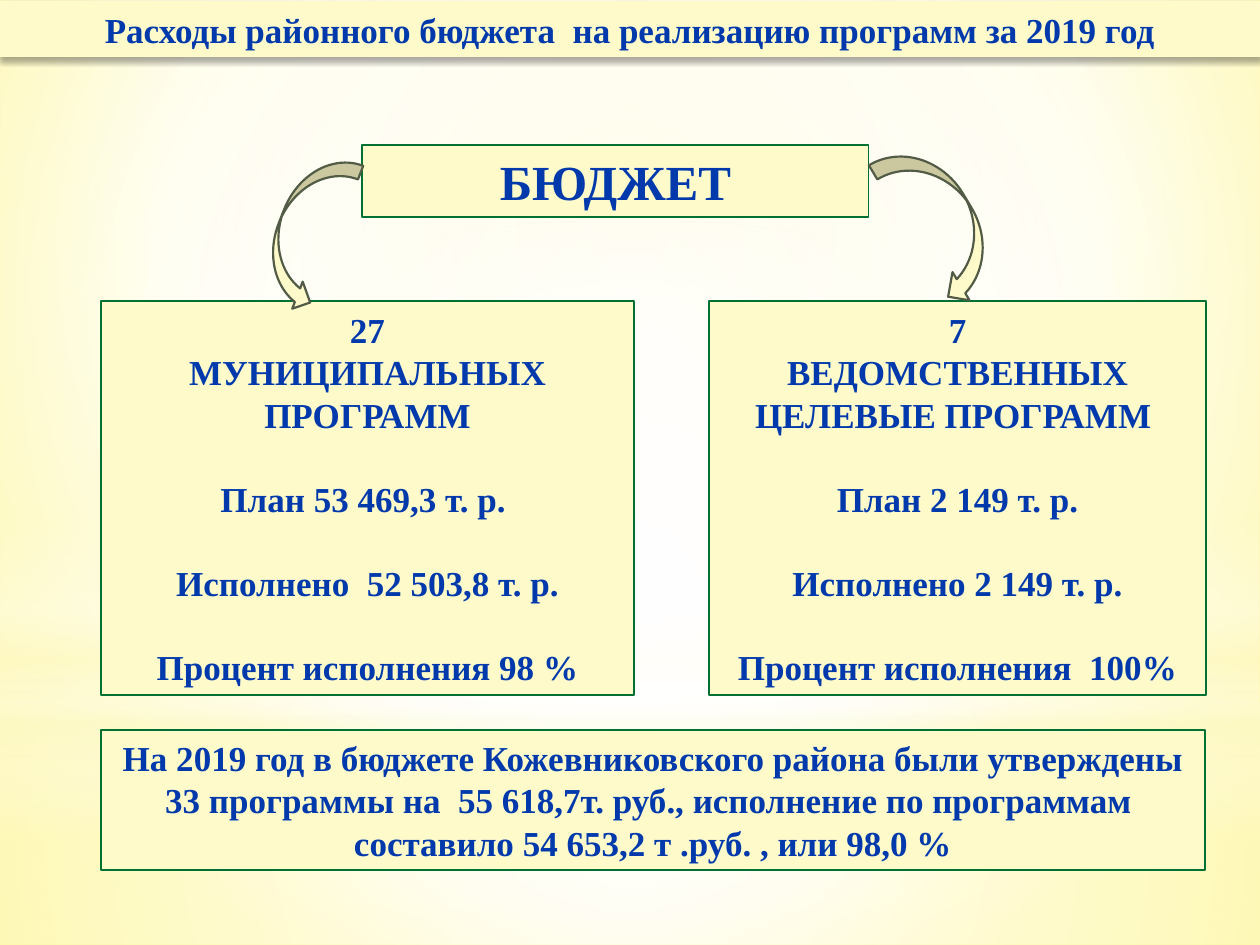
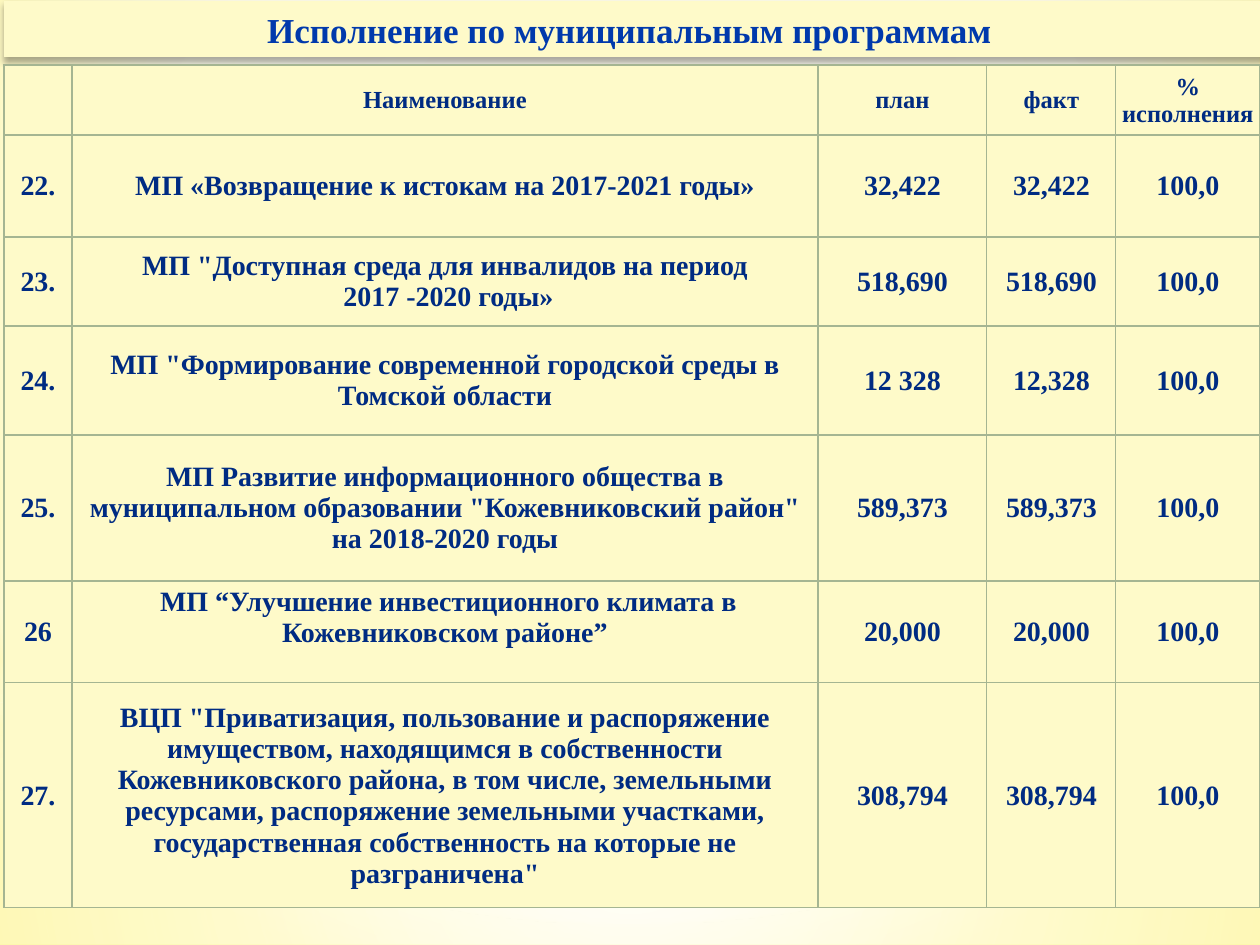
import pptx
import pptx.dml.color
import pptx.enum.shapes
import pptx.enum.text
import pptx.oxml
import pptx.util

SHAPES = pptx.enum.shapes.MSO_SHAPE
MIDDLE = pptx.enum.text.MSO_ANCHOR.MIDDLE
NAMESPACE = 'xmlns:a="http://schemas.openxmlformats.org/drawingml/2006/main"'
PX_PER_INCH = 126

CENTER = (50, 50, 50, 50)
MASTER_GRADIENTS = [
    (SHAPES.RECTANGLE, (0, 703, 1260, 242),
     [(0, "FFFFFF", 91), (37, "FFFFFF", 76), (100, "FEFAC9", 79)], CENTER),
    (SHAPES.RECTANGLE, (0, 0, 1260, 703),
     [(0, "FFFFFF", 89), (48, "FFFFFF", 62), (100, "FEFAC9", 79)], CENTER),
    (SHAPES.RECTANGLE, (0, 519, 1260, 315),
     [(0, "FFFFFF", 0), (29, "FFFFFF", 30), (45, "FEFAC9", 40),
      (55, "FFFFFF", 26), (65, "FEFAC9", 60), (100, "FFFFFF", 0)], None),
    (SHAPES.OVAL, (0, 221, 1260, 703),
     [(0, "FFFFFF", 100), (56, "FFFFFF", 0)], CENTER),
]
BACKGROUND_STOPS = [(0, "FFF9B5", 100), (60, "FFFFFF", 100), (100, "FFF46F", 100)]

MUNICIPAL_LINES = ["27", "МУНИЦИПАЛЬНЫХ ПРОГРАММ", "План 53 469,3 т. р. ",
                   "Исполнено  52 503,8 т. р.", "Процент исполнения 98 %"]
DEPARTMENT_LINES = ["7", "ВЕДОМСТВЕННЫХ ЦЕЛЕВЫЕ ПРОГРАММ ", "План 2 149 т. р.",
                    "Исполнено 2 149 т. р.", "Процент исполнения  100%"]
SUMMARY = ("На 2019 год в бюджете Кожевниковского района были утверждены 33 программы "
           "на  55 618,7т. руб., исполнение по программам  составило 54 653,2 т .руб. , "
           "или 98,0 %")

COLUMN_WIDTHS = [68, 746, 169, 129, 144]
ROW_HEIGHTS = [70, 102, 89, 109, 146, 102, 225]
PROGRAM_ROWS = [
    ["", "Наименование", "план", "факт", "% исполнения"],
    ["22.", "МП «Возвращение к истокам на 2017-2021 годы»", "32,422", "32,422", "100,0"],
    ["23.", "МП \"Доступная среда для инвалидов на период\n 2017 -2020 годы»",
     "518,690", "518,690", "100,0"],
    ["24.", "МП \"Формирование современной городской среды в Томской области",
     "12 328", "12,328", "100,0"],
    ["25.", "МП Развитие информационного общества в муниципальном образовании "
            "\"Кожевниковский район\" на 2018-2020 годы", "589,373", "589,373", "100,0"],
    ["26", " МП “Улучшение инвестиционного климата в Кожевниковском районе”",
     "20,000", "20,000", "100,0"],
    ["27.", "ВЦП \"Приватизация, пользование и распоряжение имуществом, находящимся в "
            "собственности Кожевниковского района, в том числе, земельными ресурсами, "
            "распоряжение земельными участками, государственная собственность на которые "
            "не разграничена\"", "308,794", "308,794", "100,0"],
]


def px(length):
    return pptx.util.Inches(length / PX_PER_INCH)


def color(value):
    return pptx.dml.color.RGBColor.from_string(value)


def apply_gradient(fill, element, stops, focus):
    fill.gradient()
    stop_xml = "".join(
        f'<a:gs pos="{position * 1000}"><a:srgbClr val="{value}">'
        f'<a:alpha val="{opacity * 1000}"/></a:srgbClr></a:gs>'
        for position, value, opacity in stops)
    if focus:
        sides = " ".join(f'{side}="{share * 1000}"' for side, share in zip("ltrb", focus))
        direction = f'<a:path path="circle"><a:fillToRect {sides}/></a:path>'
    else:
        direction = '<a:lin ang="5400000" scaled="0"/>'
    gradient = pptx.oxml.parse_xml(
        f'<a:gradFill {NAMESPACE} rotWithShape="1"><a:gsLst>{stop_xml}</a:gsLst>'
        f'{direction}</a:gradFill>')
    default_gradient = element.xpath(".//a:gradFill")[0]
    default_gradient.getparent().replace(default_gradient, gradient)


class Deck:
    font = "Times New Roman"
    cream = "FEFAC9"
    blue = "0039AC"
    navy = "002B82"
    green = "007033"
    olive = "515B45"
    border = "A5B592"

    def __init__(self):
        self.presentation = pptx.Presentation()
        self.presentation.slide_width = px(1260)
        self.presentation.slide_height = px(945)
        self.slide = None

    def new_slide(self, title, left):
        layout = self.presentation.slide_layouts[5]
        self.slide = self.presentation.slides.add_slide(layout)
        shape = self.slide.shapes.title
        shape.left, shape.top, shape.width, shape.height = map(px, (left, 1, 1260, 56))
        shape.fill.solid()
        shape.fill.fore_color.rgb = color(self.cream)
        shape.line.fill.background()
        shape.element.spPr.append(pptx.oxml.parse_xml(
            f'<a:effectLst {NAMESPACE}><a:outerShdw blurRad="44450" dist="27940" '
            'dir="5400000"><a:srgbClr val="000000"><a:alpha val="32000"/></a:srgbClr>'
            '</a:outerShdw></a:effectLst>'))
        self.frame_text(shape.text_frame, [title], 20)

    def paint_master(self):
        master = self.presentation.slide_master
        apply_gradient(master.background.fill, master.element,
                       BACKGROUND_STOPS, (20, 10, 20, 60))
        for index, (kind, box, stops, focus) in enumerate(MASTER_GRADIENTS):
            shape = self.shape(kind, box, None)
            apply_gradient(shape.fill, shape.element, stops, focus)
            shape.element.xpath(".//p:cNvPr")[0].set("id", str(20 + index))
            master.shapes.element.insert(2 + index, shape.element)

    def shape(self, kind, box, line, width=0.75, rotation=0):
        shape = self.slide.shapes.add_shape(kind, *map(px, box))
        shape.shadow.inherit = False
        shape.rotation = rotation
        shape.fill.solid()
        shape.fill.fore_color.rgb = color(self.cream)
        if line:
            shape.line.color.rgb = color(line)
            shape.line.width = pptx.util.Pt(width)
        else:
            shape.line.fill.background()
        return shape

    def text_box(self, box, lines, size=20, gap_from=None):
        shape = self.shape(SHAPES.RECTANGLE, box, self.green)
        self.frame_text(shape.text_frame, lines, size, gap_from)

    def arrow(self, kind, box, rotation):
        self.shape(kind, box, self.olive, 1.25, rotation)

    def frame_text(self, frame, lines, size, gap_from=None):
        frame.word_wrap = True
        frame.auto_size = pptx.enum.text.MSO_AUTO_SIZE.NONE
        frame.vertical_anchor = MIDDLE
        self.paragraphs(frame, lines, size, self.blue, 1.2, gap_from)

    def paragraphs(self, frame, lines, size, text_color, leading, gap_from=None):
        for index, line in enumerate(lines):
            paragraph = frame.add_paragraph() if index else frame.paragraphs[0]
            paragraph.alignment = pptx.enum.text.PP_ALIGN.CENTER
            paragraph.line_spacing = pptx.util.Pt(size * leading)
            paragraph.space_before = pptx.util.Pt(0)
            if gap_from and index >= gap_from:
                paragraph.space_before = pptx.util.Pt(size * leading)
            run = paragraph.add_run()
            run.text = line
            run.font.name = self.font
            run.font.size = pptx.util.Pt(size)
            run.font.bold = True
            run.font.color.rgb = color(text_color)

    def table(self, left, top, widths, heights, rows):
        frame = self.slide.shapes.add_table(
            len(rows), len(widths), px(left), px(top), px(sum(widths)), px(sum(heights)))
        table = frame.table
        table.first_row = table.horz_banding = False
        for column, width in zip(table.columns, widths):
            column.width = px(width)
        for row_index, (texts, height) in enumerate(zip(rows, heights)):
            table.rows[row_index].height = px(height)
            for column_index, text in enumerate(texts):
                self.cell(table.cell(row_index, column_index), text,
                          16 if row_index else 14)
        return table

    def cell(self, cell, text, size):
        cell.margin_left = cell.margin_right = cell.margin_top = px(1)
        cell.margin_bottom = 0
        cell.vertical_anchor = MIDDLE
        cell.fill.solid()
        cell.fill.fore_color.rgb = color(self.cream)
        properties = cell._tc.get_or_add_tcPr()
        for index, side in enumerate("LRTB"):
            properties.insert(index, pptx.oxml.parse_xml(
                f'<a:ln{side} {NAMESPACE} w="9525"><a:solidFill>'
                f'<a:srgbClr val="{self.border}"/></a:solidFill></a:ln{side}>'))
        if text:
            self.paragraphs(cell.text_frame, text.split("\n"), size, self.navy, 1.11)


def main():
    deck = Deck()
    deck.new_slide("Расходы районного бюджета  на реализацию программ за 2019 год", 0)
    deck.paint_master()
    deck.text_box((362, 145, 507, 72), ["БЮДЖЕТ"], 28)
    deck.text_box((709, 301, 497, 394), DEPARTMENT_LINES, gap_from=2)
    deck.text_box((101, 301, 533, 394), MUNICIPAL_LINES, gap_from=2)
    deck.arrow(SHAPES.CURVED_LEFT_ARROW, (908, 136, 66, 170), 328.9)
    deck.arrow(SHAPES.CURVED_RIGHT_ARROW, (278, 150, 58, 161), 21.2)
    deck.text_box((101, 730, 1104, 140), [SUMMARY])

    deck.new_slide("Исполнение по муниципальным программам ", 4)
    table = deck.table(4, 65, COLUMN_WIDTHS, ROW_HEIGHTS, PROGRAM_ROWS)
    table.cell(5, 1).margin_bottom = px(30)

    deck.presentation.save("out.pptx")


if __name__ == "__main__":
    main()
